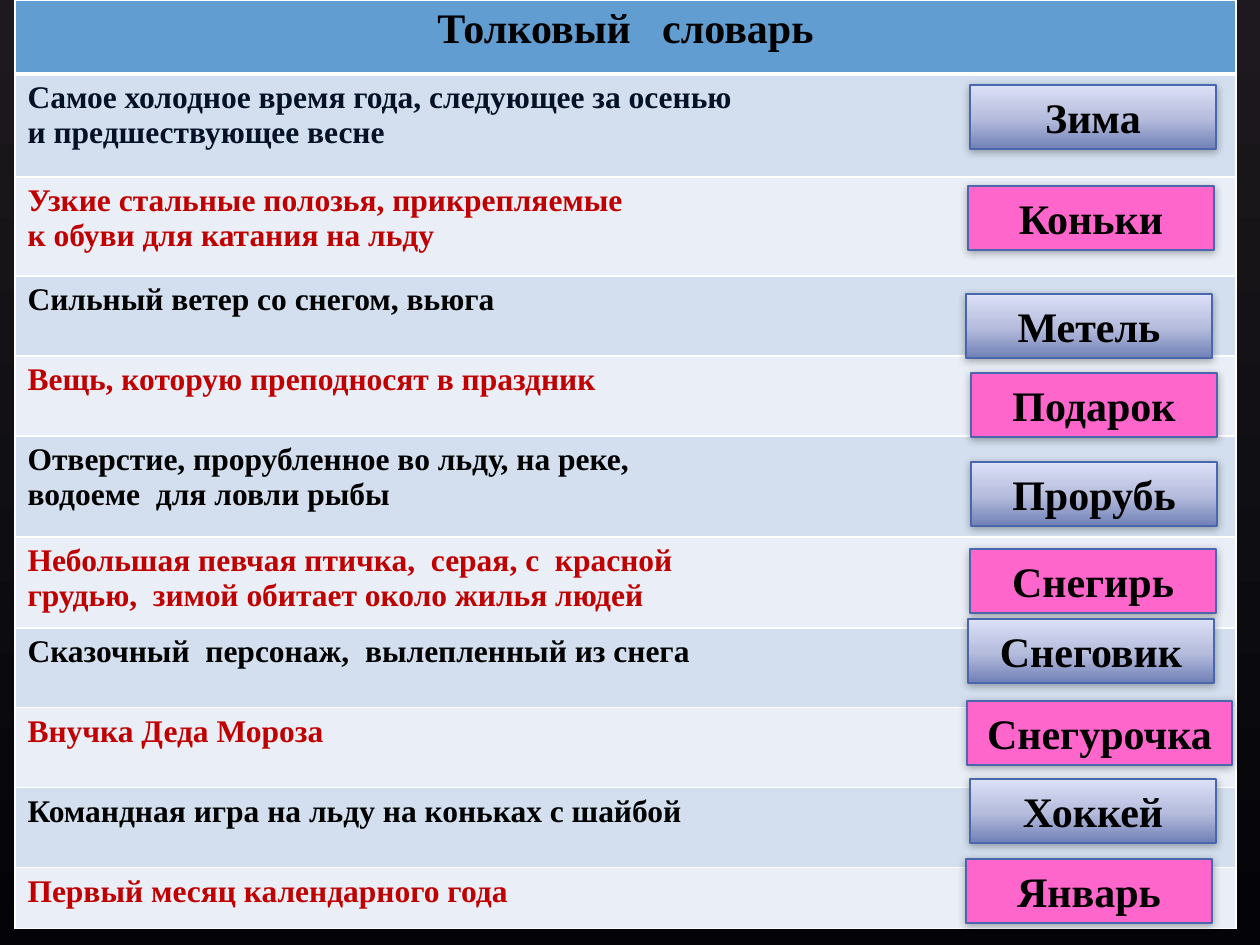
from lxml.etree import SubElement
from pptx import Presentation
from pptx.dml.color import RGBColor
from pptx.enum.shapes import MSO_SHAPE
from pptx.enum.text import MSO_ANCHOR, MSO_AUTO_SIZE, PP_ALIGN
from pptx.oxml.ns import qn
from pptx.util import Pt

PX = 914400 // 126
FONT = "Times New Roman"
BLACK, NAVY, RED, WHITE = "000000", "031227", "C00000", "FFFFFF"
HEADER_BLUE, PINK, BOX_LINE = "629DD1", "FF66CC", "4A66AC"
BANDS = ("D3DFEE", "EAEFF7")
BACKDROP = [(0, "1D191E"), (100, "040408")]
STEEL = [(0, "7181B7"), (48, "B6BDDD"), (100, "DCE1F7")]

HEADING = "Толковый   словарь"
TABLE_LEFT, TABLE_WIDTH, HEADER_HEIGHT = 15, 1221, 74
WORD_WIDTH, LONG_WORD_WIDTH, WORD_HEIGHT = 246, 265, 64

# definition lines, row height, word, left and top of the word box
ENTRIES = [
    (["Самое холодное время года, следующее за осенью", "и предшествующее весне"],
     103, "Зима", 970, 85),
    (["Узкие стальные полозья, прикрепляемые", "к обуви для катания на льду"],
     99, "Коньки", 968, 186),
    (["Сильный ветер со снегом, вьюга"], 80, "Метель", 966, 294),
    (["Вещь, которую преподносят в праздник"], 80, "Подарок", 971, 373),
    (["Отверстие, прорубленное во льду, на реке,", "водоеме  для ловли рыбы"],
     101, "Прорубь", 971, 462),
    (["Небольшая певчая птичка,  серая, с  красной",
      "грудью,  зимой обитает около жилья людей"], 91, "Снегирь", 970, 549),
    (["Сказочный  персонаж,  вылепленный из снега"], 80, "Снеговик", 968, 619),
    (["Внучка Деда Мороза"], 80, "Снегурочка", 967, 701),
    (["Командная игра на льду на коньках с шайбой"], 80, "Хоккей", 970, 779),
    (["Первый месяц календарного года"], 61, "Январь", 966, 859),
]


def rgb(code):
    return RGBColor.from_string(code)


def write(frame, lines, size=24, color=BLACK, align=PP_ALIGN.CENTER):
    frame.word_wrap = True
    for index, line in enumerate(lines):
        paragraph = frame.paragraphs[0] if index == 0 else frame.add_paragraph()
        paragraph.alignment = align
        run = paragraph.add_run()
        run.text = line
        run.font.name, run.font.size, run.font.bold = FONT, Pt(size), True
        run.font.color.rgb = rgb(color)


def add_color(parent, code, alpha=100):
    color = SubElement(parent, qn("a:srgbClr"), val=code)
    if alpha < 100:
        SubElement(color, qn("a:alpha"), val=str(alpha * 1000))


def paint_gradient(fill, owner, stops, angle):
    """Fill with any number of stops; the angle runs counterclockwise."""
    fill.gradient()
    fill.gradient_angle = angle
    stop_list = next(owner.iter(qn("a:gsLst")))
    stop_list.clear()
    for position, code in stops:
        add_color(SubElement(stop_list, qn("a:gs"), pos=str(position * 1000)), code)


def format_cell(cell, fill, top=1, bottom=1):
    """Set white borders, with widths in points, and then the fill."""
    properties = cell._tc.get_or_add_tcPr()
    for side, width in (("L", 1), ("R", 1), ("T", top), ("B", bottom)):
        border = SubElement(properties, qn(f"a:ln{side}"), w=str(Pt(width)))
        add_color(SubElement(border, qn("a:solidFill")), WHITE)
    cell.fill.solid()
    cell.fill.fore_color.rgb = rgb(fill)


def add_shadow(shape):
    shape.shadow.inherit = False
    effects = shape._element.spPr.find(qn("a:effectLst"))
    shadow = SubElement(effects, qn("a:outerShdw"), blurRad=str(Pt(5)),
                        dist=str(Pt(1)), dir="5400000", rotWithShape="0")
    add_color(shadow, BLACK, alpha=32)


def add_dictionary(slide):
    heights = [HEADER_HEIGHT] + [entry[1] for entry in ENTRIES]
    table = slide.shapes.add_table(len(heights), 1, TABLE_LEFT * PX, 0,
                                   TABLE_WIDTH * PX, sum(heights) * PX).table
    for row, height in zip(table.rows, heights):
        row.height = height * PX
    header = table.cell(0, 0)
    format_cell(header, HEADER_BLUE, bottom=3)
    write(header.text_frame, [HEADING])
    for index, (definition, *_) in enumerate(ENTRIES):
        cell = table.cell(index + 1, 0)
        format_cell(cell, BANDS[index % 2], top=1 if index else 3)
        color = RED if index % 2 else BLACK if index else NAVY
        align = PP_ALIGN.JUSTIFY if len(definition) > 1 else PP_ALIGN.LEFT
        write(cell.text_frame, definition, size=18, color=color, align=align)


def add_word(slide, index, word, left, top):
    width = LONG_WORD_WIDTH if len(word) > 8 else WORD_WIDTH
    box = slide.shapes.add_shape(MSO_SHAPE.RECTANGLE, left * PX, top * PX,
                                 width * PX, WORD_HEIGHT * PX)
    if index % 2:
        box.fill.solid()
        box.fill.fore_color.rgb = rgb(PINK)
    else:
        paint_gradient(box.fill, box._element.spPr, STEEL, 90)
    box.line.color.rgb = rgb(BOX_LINE)
    box.line.width = Pt(1)
    add_shadow(box)
    box.text_frame.vertical_anchor = MSO_ANCHOR.MIDDLE
    box.text_frame.auto_size = MSO_AUTO_SIZE.SHAPE_TO_FIT_TEXT
    write(box.text_frame, [word])


def main():
    deck = Presentation()
    deck.slide_width, deck.slide_height = 1260 * PX, 945 * PX
    slide = deck.slides.add_slide(deck.slide_layouts[6])
    paint_gradient(slide.background.fill, slide._element, BACKDROP, 270)
    add_dictionary(slide)
    for index, (_, _, word, left, top) in enumerate(ENTRIES):
        add_word(slide, index, word, left, top)
    deck.save("out.pptx")


if __name__ == "__main__":
    main()
